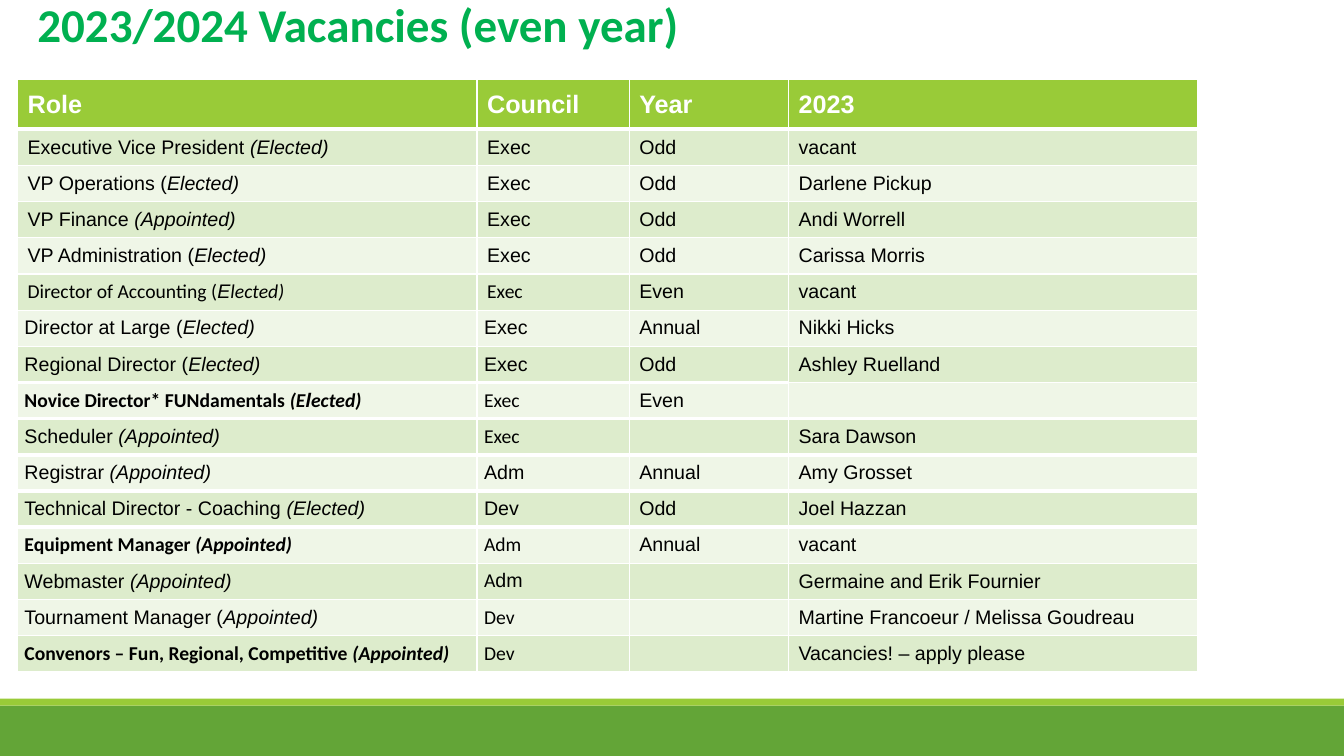
from lxml import etree
from pptx import Presentation
from pptx.dml.color import RGBColor
from pptx.enum import shapes, text
from pptx.oxml import ns
from pptx.util import Pt

WHITE = RGBColor(0xFF, 0xFF, 0xFF)
BLACK = RGBColor(0, 0, 0)
TITLE_GREEN = RGBColor(0x00, 0xB0, 0x50)
LIME = RGBColor(0x99, 0xCB, 0x38)
LEAF = RGBColor(0x63, 0xA5, 0x37)
BANDS = (RGBColor(0xEF, 0xF6, 0xE7), RGBColor(0xDD, 0xEC, 0xCC))

COLUMN_WIDTHS = (328.3, 108.7, 113.8, 292.3)
HEADER_HEIGHT, ROW_HEIGHT = 35.5, 25.85
FIRST_NARROW_ROW = 6
HEAVY_RULES = {0, 7, 8, 9, 10, 11}
MARKS = {"_": "italic", "^": "bold", "~": "calibri"}
ROWS = (
    ("^Role", "^Council", "^Year", "^2023"),
    ("Executive Vice President _(Elected)", "Exec", "Odd", "vacant"),
    ("VP Operations (_Elected)", "Exec", "Odd", "Darlene Pickup"),
    ("VP Finance _(Appointed)", "Exec", "Odd", "Andi Worrell"),
    ("VP Administration (_Elected)", "Exec", "Odd", "Carissa Morris"),
    ("~Director of Accounting (~_E~lected)", "~Exec", "Even", "vacant"),
    ("Director at Large (_Elected)", "Exec", "Annual", "Nikki Hicks"),
    ("Regional Director (_Elected)", "Exec", "Odd", "Ashley Ruelland"),
    ("~^Novice Director* FUNdamentals _(E~l~ected)", "~Exec", "Even", ""),
    ("Scheduler _(Appointed)", "~Exec", "", "Sara Dawson"),
    ("Registrar _(Appointed)", "Adm", "Annual", "Amy Grosset"),
    ("Technical Director - Coaching _(Elected)", "Dev", "Odd", "Joel Hazzan"),
    ("~^Equipment Manager _(Appointed)", "~Adm", "Annual", "vacant"),
    ("Webmaster _(Appointed)", "~A~dm", "", "Germaine and Erik Fournier"),
    ("Tournament Manager (_Appointed)", "~Dev", "", "Martine Francoeur / Melissa Goudreau"),
    ("~^Convenors – Fun, Regional, Competitive_ (Appointed)", "~Dev", "", "Vacancies! – apply please"),
)


def split_runs(marked):
    """Yield (words, active styles) pairs; each mark toggles its style."""
    words, styles = "", set()
    for char in marked:
        if char in MARKS:
            if words:
                yield words, set(styles)
            words = ""
            styles ^= {MARKS[char]}
        else:
            words += char
    if words:
        yield words, styles


def add_runs(p, marked, size, color):
    """Write marked text into a paragraph."""
    for words, styles in split_runs(marked):
        r = p.add_run()
        r.text = words
        r.font.name = "Calibri" if "calibri" in styles else "Arial"
        r.font.size = Pt(size)
        r.font.bold = "bold" in styles
        r.font.italic = "italic" in styles
        r.font.color.rgb = color


def is_heavy(row, column):
    """Tell whether the rule below this cell is a heavy one."""
    return row in HEAVY_RULES and (row, column) != (7, 3)


def set_borders(cell, top, bottom):
    """Draw white cell borders with the given top and bottom widths."""
    tc_pr = cell._tc.get_or_add_tcPr()
    for side, width in (("L", 1), ("R", 1), ("T", top), ("B", bottom)):
        line = etree.SubElement(tc_pr, ns.qn(f"a:ln{side}"), w=str(Pt(width)))
        fill = etree.SubElement(line, ns.qn("a:solidFill"))
        etree.SubElement(fill, ns.qn("a:srgbClr"), val=str(WHITE))


def add_title(s, x, y, w, h):
    """Place and format the slide title."""
    sp = s.shapes.title
    sp.left, sp.top, sp.width, sp.height = Pt(x), Pt(y), Pt(w), Pt(h)
    tf = sp.text_frame
    tf.text = "2023/2024 Vacancies (even year)"
    tf.word_wrap = True
    tf.auto_size = text.MSO_AUTO_SIZE.NONE
    tf.vertical_anchor = text.MSO_ANCHOR.BOTTOM
    p = tf.paragraphs[0]
    p.alignment = text.PP_ALIGN.LEFT
    p.line_spacing = 0.65
    font = p.runs[0].font
    font.name, font.size, font.bold = "Calibri", Pt(33.6), True
    font.color.rgb = TITLE_GREEN


def add_vacancies(s, x, y):
    """Build the table of roles with its top left corner at x, y."""
    height = HEADER_HEIGHT + ROW_HEIGHT * (len(ROWS) - 1)
    table = s.shapes.add_table(len(ROWS), len(COLUMN_WIDTHS), Pt(x), Pt(y),
                               Pt(sum(COLUMN_WIDTHS)), Pt(height)).table
    for column, width in zip(table.columns, COLUMN_WIDTHS):
        column.width = Pt(width)
    for i, row in enumerate(ROWS):
        header = i == 0
        table.rows[i].height = Pt(HEADER_HEIGHT if header else ROW_HEIGHT)
        for j, marked in enumerate(row):
            cell = table.cell(i, j)
            narrow = i >= FIRST_NARROW_ROW and j < 2
            cell.margin_left = cell.margin_right = Pt(5 if narrow else 7.2)
            cell.margin_top = cell.margin_bottom = Pt(0)
            cell.vertical_anchor = text.MSO_ANCHOR.MIDDLE
            set_borders(cell, 3 if is_heavy(i - 1, j) else 1, 3 if is_heavy(i, j) else 1)
            cell.fill.solid()
            cell.fill.fore_color.rgb = LIME if header else BANDS[i % 2]
            add_runs(cell.text_frame.paragraphs[0], marked,
                     18 if header else 14, WHITE if header else BLACK)


def add_footer_bands(s, x, y, w, h):
    """Fill the foot of the slide with a thin and a thick green band."""
    thin = 5
    for top, height, color in ((y + thin, h - thin, LEAF), (y, thin, LIME)):
        sp = s.shapes.add_shape(shapes.MSO_SHAPE.RECTANGLE, Pt(x), Pt(top), Pt(w), Pt(height))
        sp.shadow.inherit = False
        sp.fill.solid()
        sp.fill.fore_color.rgb = color
        sp.line.fill.background()


def main():
    """Build and save the slide."""
    prs = Presentation()
    prs.slide_width, prs.slide_height = Pt(960), Pt(540)
    s = prs.slides.add_slide(prs.slide_layouts[5])
    add_footer_bands(s, 0, 499, 960, 41)
    add_vacancies(s, 12.5, 56.9)
    add_title(s, 19.5, 5, 680, 34)
    prs.save("out.pptx")


if __name__ == "__main__":
    main()
